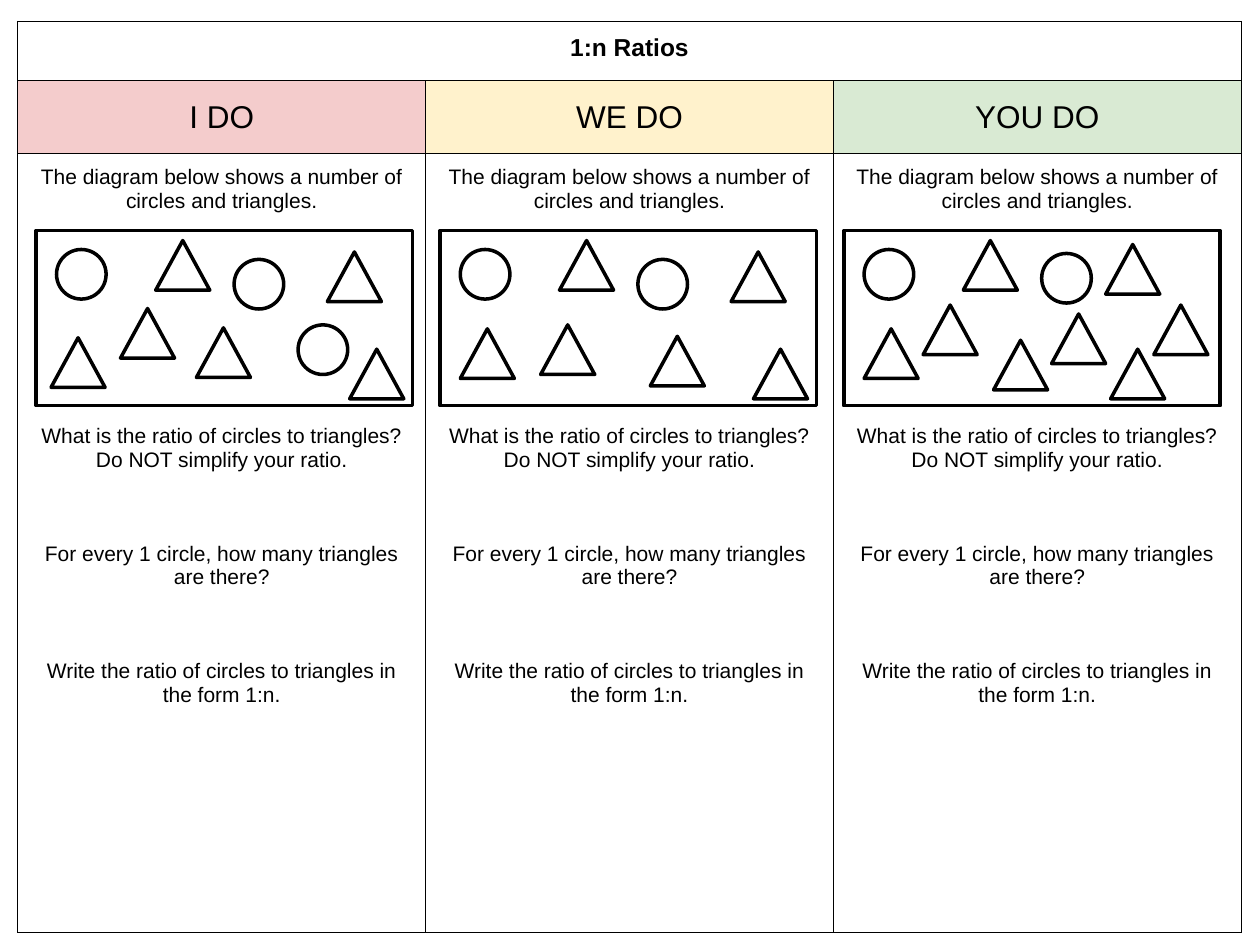
from lxml import etree
from pptx import Presentation
from pptx.dml.color import RGBColor
from pptx.enum.shapes import MSO_SHAPE
from pptx.enum.text import MSO_ANCHOR, PP_ALIGN
from pptx.oxml.ns import qn
from pptx.util import Cm, Pt

RECTANGLE = MSO_SHAPE.RECTANGLE
CIRCLE = MSO_SHAPE.OVAL
TRIANGLE = MSO_SHAPE.ISOSCELES_TRIANGLE
CENTER = PP_ALIGN.CENTER
TOP = MSO_ANCHOR.TOP
MIDDLE = MSO_ANCHOR.MIDDLE

BLACK = RGBColor(0x00, 0x00, 0x00)
PINK = RGBColor(0xF4, 0xCC, 0xCC)
CREAM = RGBColor(0xFF, 0xF2, 0xCC)
GREEN = RGBColor(0xD9, 0xEA, 0xD3)

HEADINGS = [("I DO", PINK), ("WE DO", CREAM), ("YOU DO", GREEN)]
QUESTIONS = [
    ("The diagram below shows a number of circles and triangles.", 0),
    ("What is the ratio of circles to triangles?", 121),
    ("Do NOT simplify your ratio.", 0),
    ("For every 1 circle, how many triangles are there?", 40.3),
    ("Write the ratio of circles to triangles in the form 1:n.", 40.3),
]

COLUMN_WIDTH = 8.22
ROW_HEIGHTS = [1.2, 1.46, 15.7]
PANEL_LEFT, PANEL_TOP, PANEL_PITCH = 0.73, 4.65, 8.14
PANEL_SIZE = (7.59, 3.53)
CIRCLE_SIZE = (1, 1)
TRIANGLE_SIZE = (1.09, 1)

DIAGRAMS = [
    {
        "circles": [(0.41, 0.38), (3.99, 0.58), (5.28, 1.9)],
        "triangles": [(5.87, 0.43), (3.23, 1.96), (2.41, 0.2),
                      (0.3, 2.16), (6.32, 2.39), (1.7, 1.57)],
    },
    {
        "circles": [(0.41, 0.38), (3.99, 0.58)],
        "triangles": [(5.87, 0.43), (4.24, 2.13), (2.41, 0.2),
                      (0.41, 1.98), (6.32, 2.39), (2.03, 1.9)],
    },
    {
        "circles": [(0.41, 0.38), (3.99, 0.46)],
        "triangles": [(5.28, 0.28), (3.02, 2.21), (2.41, 0.2),
                      (0.41, 1.98), (6.25, 1.5), (1.6, 1.5),
                      (4.19, 1.68), (5.38, 2.39)],
    },
]


def write_text(p, text, size=12, bold=False, before=0):
    p.alignment = CENTER
    p.space_before = Pt(before)
    r = p.add_run()
    r.text = text
    r.font.name = "Arial"
    r.font.size = Pt(size)
    r.font.bold = bold
    r.font.color.rgb = BLACK


def add_borders(cell):
    tc_pr = cell._tc.get_or_add_tcPr()
    for side in ("a:lnL", "a:lnR", "a:lnT", "a:lnB"):
        ln = etree.SubElement(tc_pr, qn(side), w=str(Pt(0.75)))
        fill = etree.SubElement(ln, qn("a:solidFill"))
        etree.SubElement(fill, qn("a:srgbClr"), val=str(BLACK))


def format_cell(cell, fill=None, anchor=TOP):
    cell.margin_left = cell.margin_right = Cm(0.25)
    cell.margin_top = cell.margin_bottom = Cm(0.25)
    cell.vertical_anchor = anchor
    add_borders(cell)
    if fill is None:
        cell.fill.background()
    else:
        cell.fill.solid()
        cell.fill.fore_color.rgb = fill


def add_lesson_table(s):
    width = COLUMN_WIDTH * len(HEADINGS)
    table = s.shapes.add_table(
        len(ROW_HEIGHTS), len(HEADINGS), Cm(0.36), Cm(0.43),
        Cm(width), Cm(sum(ROW_HEIGHTS))).table
    table.first_row = False
    table.horz_banding = False
    for row, height in zip(table.rows, ROW_HEIGHTS):
        row.height = Cm(height)

    title = table.cell(0, 0)
    title.merge(table.cell(0, len(HEADINGS) - 1))
    write_text(title.text_frame.paragraphs[0], "1:n Ratios", size=14, bold=True)

    for col, (heading, colour) in enumerate(HEADINGS):
        table.columns[col].width = Cm(COLUMN_WIDTH)
        format_cell(table.cell(0, col))
        cell = table.cell(1, col)
        format_cell(cell, fill=colour, anchor=MIDDLE)
        write_text(cell.text_frame.paragraphs[0], heading, size=18)

        cell = table.cell(2, col)
        format_cell(cell)
        tf = cell.text_frame
        for i, (question, before) in enumerate(QUESTIONS):
            p = tf.add_paragraph() if i else tf.paragraphs[0]
            write_text(p, question, before=before)


def add_outline(s, kind, left, top, size):
    width, height = size
    sp = s.shapes.add_shape(kind, Cm(left), Cm(top), Cm(width), Cm(height))
    sp.shadow.inherit = False
    sp.fill.background()
    sp.line.color.rgb = BLACK
    sp.line.width = Pt(2)


def add_diagram(s, left, diagram):
    add_outline(s, RECTANGLE, left, PANEL_TOP, PANEL_SIZE)
    for x, y in diagram["circles"]:
        add_outline(s, CIRCLE, left + x, PANEL_TOP + y, CIRCLE_SIZE)
    for x, y in diagram["triangles"]:
        add_outline(s, TRIANGLE, left + x, PANEL_TOP + y, TRIANGLE_SIZE)


def main():
    prs = Presentation()
    prs.slide_width = Cm(25.4)
    prs.slide_height = Cm(19.05)
    s = prs.slides.add_slide(prs.slide_layouts[6])
    add_lesson_table(s)
    for i, diagram in enumerate(DIAGRAMS):
        add_diagram(s, PANEL_LEFT + i * PANEL_PITCH, diagram)
    prs.save("out.pptx")


if __name__ == "__main__":
    main()
